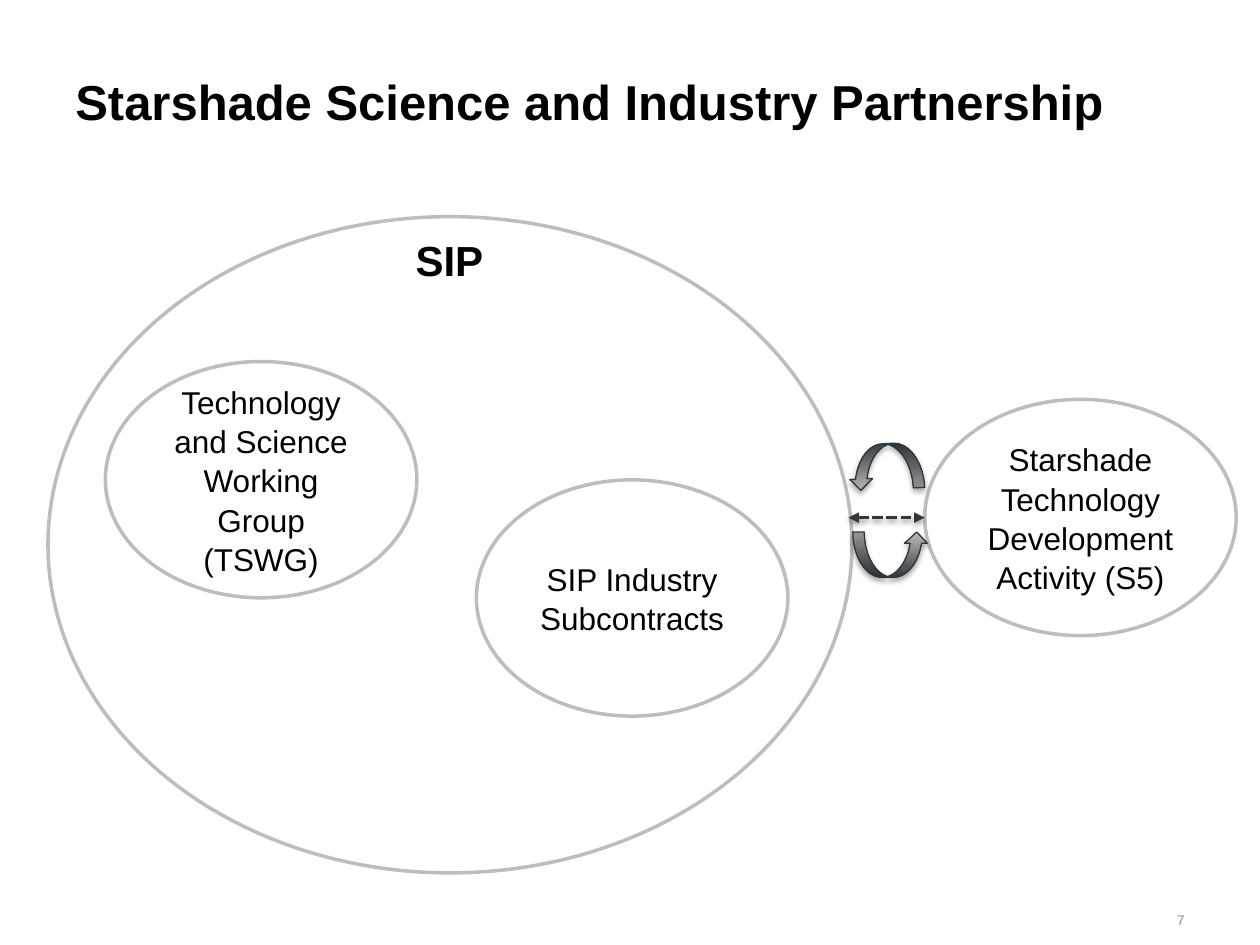
from lxml import etree
from pptx import Presentation
from pptx import util as u
from pptx.dml.color import RGBColor
from pptx.enum import dml, shapes, text
from pptx.oxml.ns import qn

BLACK = RGBColor(0x00, 0x00, 0x00)
WHITE = RGBColor(0xFF, 0xFF, 0xFF)
NUMBER_GRAY = RGBColor(0x8C, 0x8C, 0x8C)
OUTLINE_GRAY = RGBColor(0xBD, 0xBD, 0xBD)
LINK_DARK = RGBColor(0x32, 0x37, 0x3B)
ARROW_DARK = RGBColor(0x31, 0x37, 0x3C)
ARROW_LIGHT = RGBColor(0xBD, 0xBF, 0xC1)
ARROW_LINE = RGBColor(0x31, 0x36, 0x3A)

FONT = "Arial"
GROUP_SIZE = (178, 135)
ARROW_SIZE = (43, 26)


def points(*values):
    return [u.Pt(value) for value in values]


def write(box, content, size=18, color=BLACK, bold=False, wrap=True,
          align=text.PP_ALIGN.LEFT, anchor=text.MSO_ANCHOR.TOP):
    frame = box.text_frame
    frame.word_wrap = wrap
    frame.vertical_anchor = anchor
    para = frame.paragraphs[0]
    para.alignment = align
    para.line_spacing = 1.04
    span = para.add_run()
    span.text = content
    span.font.name = FONT
    span.font.size = u.Pt(size)
    span.font.bold = bold
    span.font.color.rgb = color


def add_label(page, place, content, **style):
    box = page.shapes.add_textbox(*points(*place))
    write(box, content, **style)
    return box


def add_ellipse(page, place, content=None):
    oval = page.shapes.add_shape(shapes.MSO_SHAPE.OVAL, *points(*place))
    oval.shadow.inherit = False
    oval.fill.solid()
    oval.fill.fore_color.rgb = WHITE
    oval.line.color.rgb = OUTLINE_GRAY
    oval.line.width = u.Pt(2)
    if content:
        write(oval, content, align=text.PP_ALIGN.CENTER,
              anchor=text.MSO_ANCHOR.MIDDLE)


def add_shadow(item, distance, opacity):
    """Give an item a soft shadow straight below it."""
    effects = etree.SubElement(item._element.spPr, qn("a:effectLst"))
    shadow = etree.SubElement(
        effects, qn("a:outerShdw"), blurRad=str(u.Pt(3.1)),
        dist=str(u.Pt(distance)), dir="5400000", rotWithShape="0")
    color = etree.SubElement(shadow, qn("a:srgbClr"), val=str(BLACK))
    etree.SubElement(color, qn("a:alpha"), val=str(opacity * 1000))


def add_curved_arrow(page, left, top, rotation=0):
    arrow = page.shapes.add_shape(shapes.MSO_SHAPE.CURVED_UP_ARROW,
                                  *points(left, top, *ARROW_SIZE))
    arrow.rotation = rotation
    arrow.fill.gradient()
    arrow.fill.gradient_angle = 90
    for stop, color, position in zip(arrow.fill.gradient_stops,
                                     (ARROW_DARK, ARROW_LIGHT), (0, 1)):
        stop.color.rgb = color
        stop.position = position
    arrow.line.color.rgb = ARROW_LINE
    arrow.line.width = u.Pt(0.75)
    add_shadow(arrow, 1.8, 35)


def add_two_way_link(page, start, end):
    link = page.shapes.add_connector(shapes.MSO_CONNECTOR.STRAIGHT,
                                     *points(*start, *end))
    link.line.color.rgb = LINK_DARK
    link.line.width = u.Pt(2)
    link.line.dash_style = dml.MSO_LINE.SQUARE_DOT
    line = link.line._get_or_add_ln()
    for tip in ("a:headEnd", "a:tailEnd"):
        etree.SubElement(line, qn(tip), type="triangle")
    add_shadow(link, 1.6, 38)


def main():
    deck = Presentation()
    deck.slide_width, deck.slide_height = points(720, 540)
    page = deck.slides.add_slide(deck.slide_layouts[6])

    # Page number and title
    add_label(page, (584, 511, 100, 29), "7", size=8, color=NUMBER_GRAY,
              align=text.PP_ALIGN.RIGHT, anchor=text.MSO_ANCHOR.MIDDLE)
    add_label(page, (36, 36, 648, 34.5),
              "Starshade Science and Industry Partnership",
              size=28, bold=True)

    # Partnership, its two groups and the outside activity
    add_ellipse(page, (27.4, 123.8, 459.4, 375))
    for left, top, content in (
        (528.4, 228.2, "Starshade Technology Development Activity (S5)"),
        (272.2, 274.2, "SIP Industry Subcontracts"),
        (60.2, 206.6, "Technology and Science Working Group (TSWG)"),
    ):
        add_ellipse(page, (left, top, *GROUP_SIZE), content)
    name = add_label(page, (230.4, 129.6, 53, 36), "SIP", size=24,
                     bold=True, wrap=False)
    name.text_frame.auto_size = text.MSO_AUTO_SIZE.SHAPE_TO_FIT_TEXT

    # Exchange between partnership and activity
    add_two_way_link(page, (484.8, 295.8), (528.4, 295.8))
    add_curved_arrow(page, 487.4, 304)
    add_curved_arrow(page, 484.8, 253.5, rotation=177.3)

    deck.save("out.pptx")


if __name__ == "__main__":
    main()
